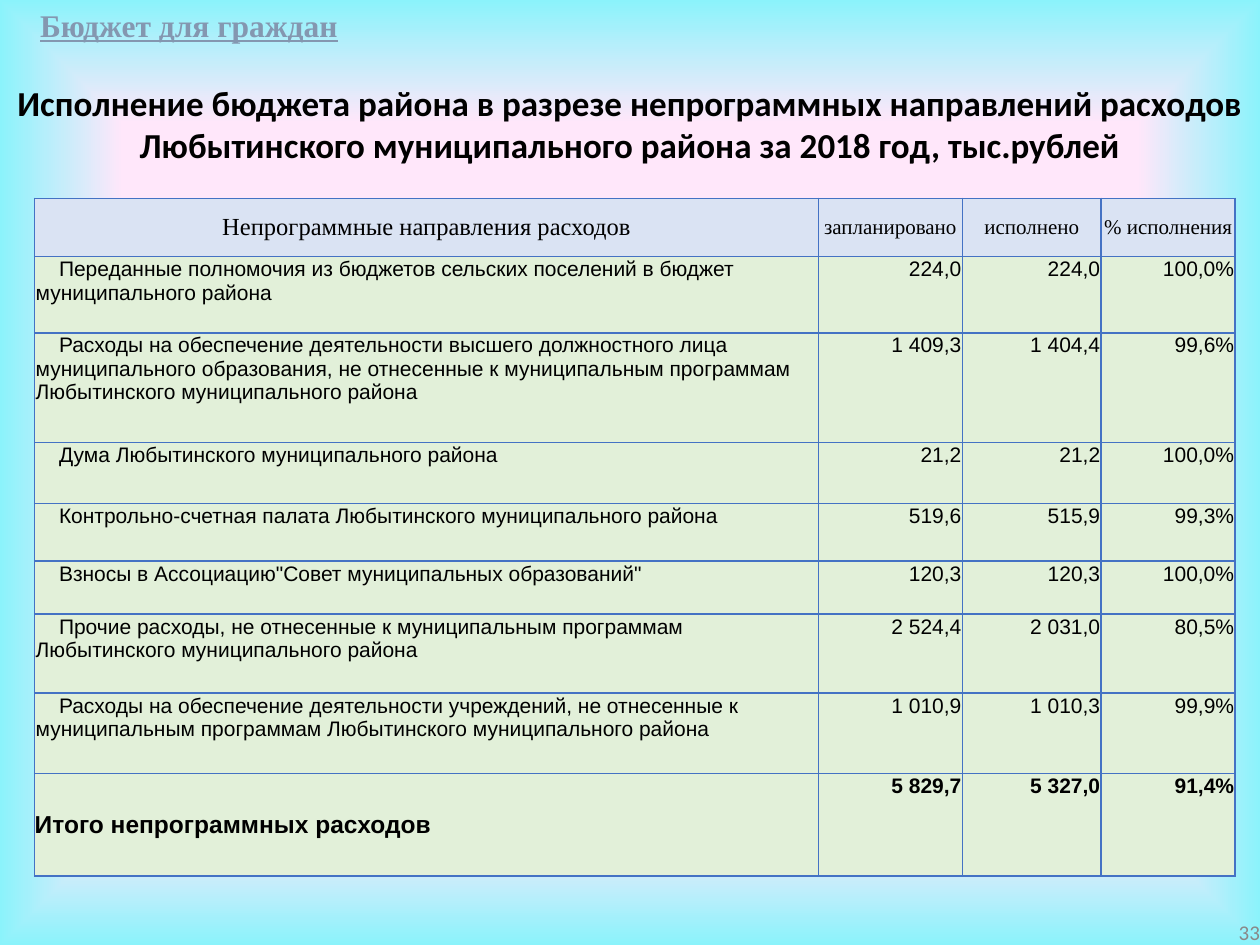
import dataclasses

import pptx
import pptx.dml.color
import pptx.enum.text
import pptx.oxml
import pptx.oxml.ns
import pptx.util

Cm = pptx.util.Cm
Pt = pptx.util.Pt
Align = pptx.enum.text.PP_ALIGN
Anchor = pptx.enum.text.MSO_ANCHOR
NS = pptx.oxml.ns.nsdecls("a")


@dataclasses.dataclass(frozen=True)
class Theme:
    ink: str = "000000"
    brand: str = "8497B0"
    page: str = "898989"
    line: str = "4472C4"
    head: str = "DAE3F3"
    body: str = "E2F0D9"
    back: tuple = ((74, "FFE7FA"), (100, "8BF3FB"), (100, "B5D2EC"), (100, "CEE1F2"))
    sans: str = "Arial"
    serif: str = "Times New Roman"
    title: str = "Calibri"
    huge: int = 20
    large: int = 18
    mid: int = 14
    small: int = 12


class Page:
    def __init__(self, slide, theme):
        self.slide = slide
        self.theme = theme

    def backdrop(self):
        stops = "".join(
            f'<a:gs pos="{pos * 1000}"><a:srgbClr val="{tint}"/></a:gs>'
            for pos, tint in self.theme.back
        )
        self.slide.background.fill.solid()
        holder = self.slide.element.find(".//" + pptx.oxml.ns.qn("p:bgPr"))
        holder.replace(holder[0], pptx.oxml.parse_xml(
            f'<a:gradFill {NS} rotWithShape="1"><a:gsLst>{stops}</a:gsLst>'
            '<a:path path="shape"><a:fillToRect l="50000" t="50000" r="50000" b="50000"/>'
            '</a:path></a:gradFill>'))

    def style(self, frame, text, face, size, tint, align=Align.LEFT, bold=False, under=None):
        frame.text = text
        para = frame.paragraphs[0]
        para.alignment = align
        run = para.runs[0]
        font = run.font
        font.name = face
        font.size = Pt(size)
        font.bold = bold
        font.underline = under
        font.color.rgb = pptx.dml.color.RGBColor.from_string(tint)
        return run

    def label(self, box, text, face, size, tint, wrap=True, inset=None, anchor=Anchor.TOP, **look):
        frame = self.slide.shapes.add_textbox(*map(Cm, box)).text_frame
        frame.word_wrap = wrap
        frame.vertical_anchor = anchor
        if inset is not None:
            frame.margin_left = frame.margin_right = Cm(inset)
            frame.margin_top = frame.margin_bottom = Cm(inset)
        if not wrap:
            frame.auto_size = pptx.enum.text.MSO_AUTO_SIZE.SHAPE_TO_FIT_TEXT
        return self.style(frame, text, face, size, tint, **look)

    def shade(self, run):
        fill = run.font._element.find(pptx.oxml.ns.qn("a:solidFill"))
        fill.addnext(pptx.oxml.parse_xml(
            f'<a:effectLst {NS}><a:outerShdw blurRad="38100" dist="38100" dir="2700000" algn="tl">'
            '<a:srgbClr val="000000"><a:alpha val="43000"/></a:srgbClr>'
            '</a:outerShdw></a:effectLst>'))

    def cell(self, cell, text, face, size, fill, inset=0.0, anchor=Anchor.TOP, indent=0, **look):
        theme = self.theme
        cell.margin_left = cell.margin_right = cell.margin_top = Cm(inset)
        cell.margin_bottom = 0
        cell.vertical_anchor = anchor
        cell.fill.solid()
        cell.fill.fore_color.rgb = pptx.dml.color.RGBColor.from_string(fill)
        self.style(cell.text_frame, text, face, size, theme.ink, **look)
        if indent:
            props = cell.text_frame.paragraphs[0]._p.get_or_add_pPr()
            props.set("marL", "0")
            props.set("indent", str(Cm(indent)))
        props = cell._tc.get_or_add_tcPr()
        for spot, side in enumerate("LRTB"):
            props.insert(spot, pptx.oxml.parse_xml(
                f'<a:ln{side} {NS} w="12700"><a:solidFill><a:srgbClr val="{theme.line}"/>'
                f'</a:solidFill></a:ln{side}>'))

    def table(self, left, top, widths, heights, heads, rows):
        theme = self.theme
        grid = self.slide.shapes.add_table(
            len(heights), len(widths), Cm(left), Cm(top), Cm(sum(widths)), Cm(sum(heights))
        ).table
        grid.first_row = grid.horz_banding = False
        for col, width in zip(grid.columns, widths):
            col.width = Cm(width)
        for row, height in zip(grid.rows, heights):
            row.height = Cm(height)
        for c, text in enumerate(heads):
            size = theme.small if c else theme.mid
            self.cell(grid.cell(0, c), text, theme.serif, size, theme.head,
                      anchor=Anchor.MIDDLE, align=Align.CENTER)
        for r, (name, *sums) in enumerate(rows, 1):
            total = r == len(rows)
            if total:
                self.cell(grid.cell(r, 0), name, theme.sans, theme.mid, theme.body,
                          anchor=Anchor.MIDDLE, bold=True)
            else:
                self.cell(grid.cell(r, 0), name, theme.sans, theme.small, theme.body,
                          inset=0.02, indent=0.47)
            for c, text in enumerate(sums, 1):
                self.cell(grid.cell(r, c), text, theme.sans, theme.small, theme.body,
                          inset=0.02, align=Align.RIGHT, bold=total)


HEADS = ("Непрограммные направления расходов", "запланировано", "исполнено", "% исполнения")
ROWS = (
    ("Переданные полномочия из бюджетов сельских поселений в бюджет муниципального района",
     "224,0", "224,0", "100,0%"),
    ("Расходы на обеспечение деятельности высшего должностного лица муниципального образования, "
     "не отнесенные к муниципальным программам Любытинского муниципального района",
     "1 409,3", "1 404,4", "99,6%"),
    ("Дума Любытинского муниципального района", "21,2", "21,2", "100,0%"),
    ("Контрольно-счетная палата Любытинского муниципального района", "519,6", "515,9", "99,3%"),
    ('Взносы в Ассоциацию"Совет муниципальных образований"', "120,3", "120,3", "100,0%"),
    ("Прочие расходы, не отнесенные к муниципальным программам "
     "Любытинского муниципального района", "2 524,4", "2 031,0", "80,5%"),
    ("Расходы на обеспечение деятельности учреждений, не отнесенные к муниципальным программам "
     "Любытинского муниципального района", "1 010,9", "1 010,3", "99,9%"),
    ("Итого непрограммных расходов", "5 829,7", "5 327,0", "91,4%"),
)
WIDTHS = (15.8, 2.9, 2.8, 2.7)
HEIGHTS = (1.17, 1.54, 2.21, 1.23, 1.16, 1.07, 1.59, 1.62, 2.07)


def main():
    deck = pptx.Presentation()
    deck.slide_width, deck.slide_height = Cm(25.4), Cm(19.05)
    theme = Theme()
    page = Page(deck.slides.add_slide(deck.slide_layouts[6]), theme)
    page.backdrop()
    page.label((19.48, 18.52, 5.92, 0.53), "33", theme.title, theme.small, theme.page,
               inset=0, anchor=Anchor.MIDDLE, align=Align.RIGHT)
    page.table(0.7, 4, WIDTHS, HEIGHTS, HEADS, ROWS)
    title = page.label(
        (0, 1.52, 25.4, 1.8),
        "Исполнение бюджета района в разрезе непрограммных направлений расходов "
        "Любытинского муниципального района за 2018 год, тыс.рублей",
        theme.title, theme.huge, theme.ink, align=Align.CENTER, bold=True)
    page.shade(title)
    page.label((0.56, 0, 6.58, 1.02), "Бюджет для граждан", theme.serif, theme.large,
               theme.brand, wrap=False, bold=True, under=True)
    deck.save("out.pptx")


if __name__ == "__main__":
    main()
